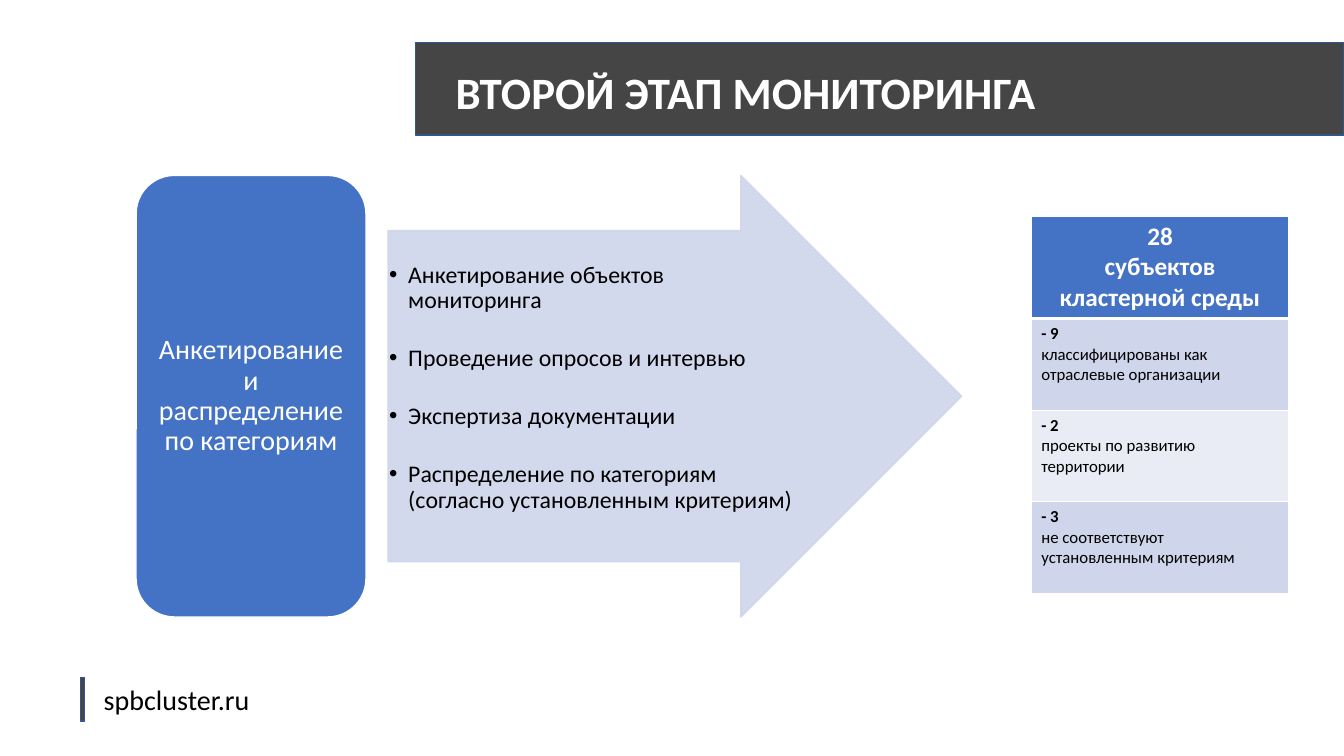
from lxml import etree
from pptx import Presentation
from pptx.dml.color import RGBColor
from pptx.enum import shapes, text
from pptx.oxml import ns
from pptx.util import Pt

WHITE = RGBColor(0xFF, 0xFF, 0xFF)
BLACK = RGBColor(0, 0, 0)
DARK = RGBColor(0x45, 0x45, 0x45)
NAVY = RGBColor(0x32, 0x54, 0x91)
BLUE = RGBColor(0x44, 0x72, 0xC4)
PALE = RGBColor(0xCF, 0xD5, 0xEA)
MIST = RGBColor(0xE9, 0xEB, 0xF5)

KIND = shapes.MSO_SHAPE
LEFT, MID = text.PP_ALIGN.LEFT, text.PP_ALIGN.CENTER

STEPS = [
    "Анкетирование объектов мониторинга",
    "Проведение опросов и интервью",
    "Экспертиза документации",
    "Распределение по категориям (согласно установленным критериям)",
]
GROUPS = [
    ("- 9", "классифицированы как отраслевые организации"),
    ("- 2", "проекты по развитию территории"),
    ("- 3", "не соответствуют установленным критериям"),
]


def apply(item, **vals):
    for key, val in vals.items():
        setattr(item, key, val)


def place(item, box):
    names = ("left", "top", "width", "height")
    apply(item, **{name: Pt(val) for name, val in zip(names, box)})


def setup(frame, anchor, x=7.2, y=3.6):
    apply(frame, word_wrap=True, auto_size=text.MSO_AUTO_SIZE.NONE,
          vertical_anchor=anchor, margin_left=Pt(x), margin_right=Pt(x),
          margin_top=Pt(y), margin_bottom=Pt(y))


def write(frame, lines, size, color, bold=False, align=LEFT, pitch=1.0, gap=0):
    """Fill a text frame, one paragraph per line."""
    for i, line in enumerate(lines):
        para = frame.paragraphs[0] if i == 0 else frame.add_paragraph()
        apply(para, alignment=align, line_spacing=pitch,
              space_before=Pt(gap if i else 0), space_after=Pt(0))
        run = para.add_run()
        run.text = line
        apply(run.font, name="Calibri", size=Pt(size), bold=bold)
        run.font.color.rgb = color


def block(slide, kind, box, fill, line):
    shape = slide.shapes.add_shape(kind, *map(Pt, box))
    shape.shadow.inherit = False
    shape.fill.solid()
    shape.fill.fore_color.rgb = fill
    shape.line.color.rgb = line
    shape.line.width = Pt(1)
    return shape


def fade(shape, share):
    """Set the opacity of fill and line, in percent."""
    for tone in shape._element.spPr.iter(ns.qn("a:srgbClr")):
        etree.SubElement(tone, ns.qn("a:alpha"), val=str(share * 1000))


def edge(cell, top, bottom):
    """Draw white borders around a table cell."""
    props = cell._tc.get_or_add_tcPr()
    sides = {"lnL": 1, "lnR": 1, "lnT": top, "lnB": bottom}
    for i, (side, width) in enumerate(sides.items()):
        line = etree.Element(ns.qn("a:" + side), w=str(Pt(width)))
        fill = etree.SubElement(line, ns.qn("a:solidFill"))
        etree.SubElement(fill, ns.qn("a:srgbClr"), val=str(WHITE))
        props.insert(i, line)


def header(slide, box):
    x, y, w, h = box
    block(slide, KIND.RECTANGLE, box, DARK, NAVY)
    title = slide.shapes.title
    place(title, (x + 21.6, y + 15, w - 21.6, 45.4))
    # Bring the title above its band
    slide.shapes._spTree.append(title._element)
    setup(title.text_frame, text.MSO_ANCHOR.MIDDLE)
    write(title.text_frame, ["ВТОРОЙ ЭТАП МОНИТОРИНГА"], 32, WHITE, True,
          pitch=0.9)


def footer(slide, box):
    x, y, w, h = box
    block(slide, KIND.RECTANGLE, (x, y, 3, h), DARK, NAVY)
    label = slide.shapes.add_textbox(*map(Pt, (x + 9.4, y, w - 9.4, h)))
    setup(label.text_frame, text.MSO_ANCHOR.TOP)
    write(label.text_frame, ["spbcluster.ru"], 20, BLACK)


def process(slide, box):
    x, y, w, h = box
    # Arrow with the list of steps
    start = x + 180
    arrow = block(slide, KIND.RIGHT_ARROW, (start, y, w - 180, h), PALE, PALE)
    arrow.adjustments[0], arrow.adjustments[1] = 0.75, 0.5
    fade(arrow, 90)
    body = slide.placeholders[1]
    place(body, (start, y + 61.5, 291.6, 214))
    slide.shapes._spTree.append(body._element)
    setup(body.text_frame, text.MSO_ANCHOR.TOP, 0.7, 0.7)
    write(body.text_frame, STEPS, 17, BLACK, pitch=0.9, gap=23)
    for para in body.text_frame.paragraphs:
        props = para._p.get_or_add_pPr()
        props.set("marL", str(Pt(13.7)))
        props.set("indent", str(Pt(-13.7)))
    # Stage name
    stage = block(slide, KIND.ROUNDED_RECTANGLE, (x, y, 164.2, h), BLUE, WHITE)
    setup(stage.text_frame, text.MSO_ANCHOR.MIDDLE, 5.8, 2.9)
    write(stage.text_frame, ["Анкетирование и распределение по категориям"],
          20, WHITE, align=MID, pitch=0.9)


def results(slide, box):
    frame = slide.shapes.add_table(len(GROUPS) + 1, 1, *map(Pt, box))
    table = frame.table
    head = 73
    table.rows[0].height = Pt(head)
    cell = table.cell(0, 0)
    edge(cell, 1, 3)
    cell.fill.solid()
    cell.fill.fore_color.rgb = BLUE
    write(cell.text_frame, ["28", "субъектов кластерной среды"], 18, WHITE,
          True, MID)
    for i, lines in enumerate(GROUPS, 1):
        table.rows[i].height = Pt((box[3] - head) / len(GROUPS))
        cell = table.cell(i, 0)
        edge(cell, 3 if i == 1 else 1, 1)
        cell.fill.solid()
        cell.fill.fore_color.rgb = PALE if i % 2 else MIST
        write(cell.text_frame, lines, 12, BLACK)
        cell.text_frame.paragraphs[0].runs[0].font.bold = True


def main():
    deck = Presentation()
    deck.slide_width, deck.slide_height = Pt(960), Pt(540)
    slide = deck.slides.add_slide(deck.slide_layouts[1])
    header(slide, (296.6, 30.2, 663.4, 66.2))
    footer(slide, (57.6, 484, 163.4, 31))
    process(slide, (97.2, 125.3, 589.7, 315.4))
    results(slide, (736.6, 154.4, 184, 269.5))
    deck.save("out.pptx")


if __name__ == "__main__":
    main()
